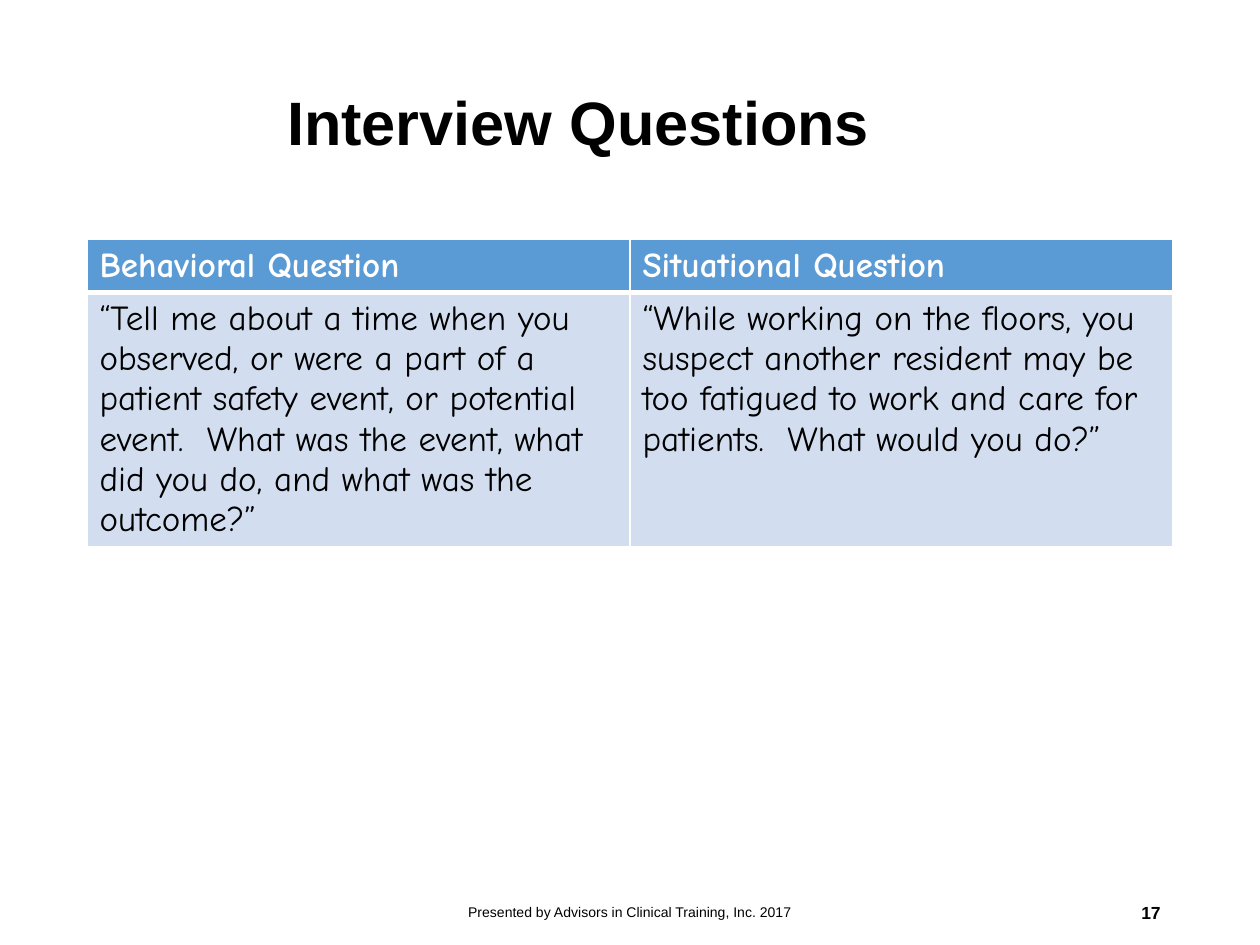
from lxml.etree import SubElement
from pptx import Presentation
from pptx.dml.color import RGBColor
from pptx.enum.text import MSO_ANCHOR, PP_ALIGN
from pptx.oxml.ns import qn
from pptx.util import Pt

BLACK, WHITE = "000000", "FFFFFF"
HEADER_BLUE, BODY_BLUE = "5B9BD5", "D2DEEF"


def color(value):
    return RGBColor.from_string(value)


class SlideBuilder:
    heading_font = "Arial"
    table_font = "Comic Neue"

    def __init__(self, slide):
        self.slide = slide

    def add_run(self, paragraph, text, ink, **formats):
        run = paragraph.add_run()
        run.text = text
        for name, value in formats.items():
            setattr(run.font, name, value)
        run.font.color.rgb = color(ink)

    def add_text(self, text, left, top, width, height, size, bold=False,
                 **paragraph_formats):
        frame = self.slide.shapes.add_textbox(
            Pt(left), Pt(top), Pt(width), Pt(height)).text_frame
        frame.word_wrap = True
        frame.vertical_anchor = MSO_ANCHOR.MIDDLE
        paragraph = frame.paragraphs[0]
        for name, value in paragraph_formats.items():
            setattr(paragraph, name, value)
        self.add_run(paragraph, text, BLACK, size=Pt(size), bold=bold,
                     name=self.heading_font)

    def add_border(self, cell, side, width):
        line = SubElement(cell._tc.get_or_add_tcPr(), qn(f"a:ln{side}"),
                          w=str(Pt(width)))
        fill = SubElement(line, qn("a:solidFill"))
        SubElement(fill, qn("a:srgbClr"), val=WHITE)

    def add_table(self, rows, left, top, width, heights, styles):
        table = self.slide.shapes.add_table(
            len(rows), len(rows[0]), Pt(left), Pt(top), Pt(width),
            Pt(sum(heights))).table
        for r, (texts, height, style) in enumerate(zip(rows, heights, styles)):
            table.rows[r].height = Pt(height)
            for c, text in enumerate(texts):
                cell = table.cell(r, c)
                for side, weight in style["borders"].items():
                    self.add_border(cell, side, weight)
                cell.fill.solid()
                cell.fill.fore_color.rgb = color(style["fill"])
                self.add_run(cell.text_frame.paragraphs[0], text, style["ink"],
                             size=Pt(20), bold=style["bold"],
                             name=self.table_font)


def main():
    deck = Presentation()
    deck.slide_width, deck.slide_height = Pt(720), Pt(540)
    builder = SlideBuilder(deck.slides.add_slide(deck.slide_layouts[6]))

    # Question comparison
    questions = [
        ("Behavioral Question", "Situational Question"),
        ("“Tell me about a time when you observed, or were a part of a "
         "patient safety event, or potential event.  What was the event, "
         "what did you do, and what was the outcome?”",
         "“While working on the floors, you suspect another resident may be "
         "too fatigued to work and care for patients.  What would you do?”"),
    ]
    header = {"fill": HEADER_BLUE, "ink": WHITE, "bold": True,
              "borders": {"L": 1, "R": 1, "T": 1, "B": 3}}
    body = {"fill": BODY_BLUE, "ink": BLACK, "bold": False,
            "borders": {"L": 1, "R": 1, "T": 3, "B": 1}}
    builder.add_table(questions, 49.7, 136.8, 620.6, (29.5, 115.2),
                      (header, body))

    # Title
    builder.add_text("Interview Questions", 157, 19.4, 514, 104.4, 35,
                     bold=True, line_spacing=0.9)

    # Footer and page number
    builder.add_text("Presented by Advisors in Clinical Training, Inc. 2017",
                     238.3, 506.9, 243.4, 28.8, 8, alignment=PP_ALIGN.CENTER)
    builder.add_text("17", 508.3, 506.9, 162, 28.8, 10, bold=True,
                     alignment=PP_ALIGN.RIGHT)

    deck.save("out.pptx")


if __name__ == "__main__":
    main()
